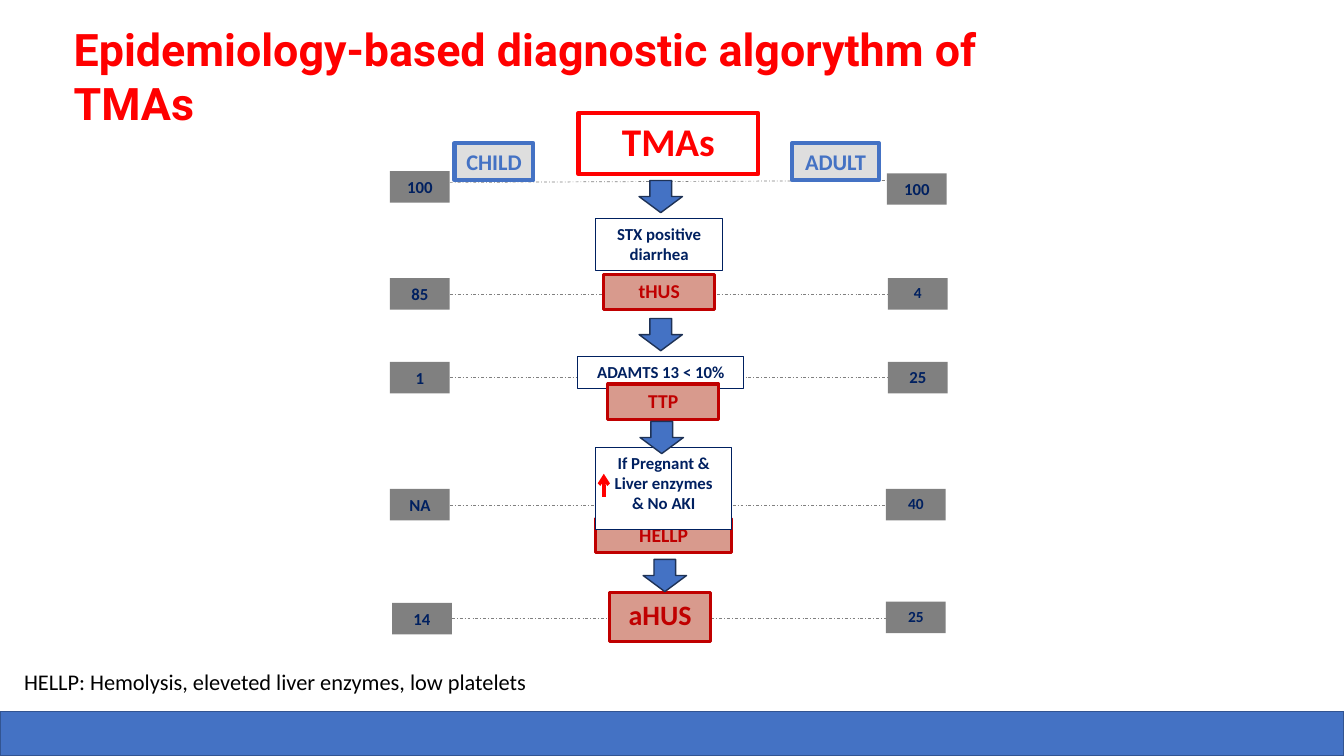
from lxml.etree import SubElement
from pptx import Presentation
from pptx.dml.color import RGBColor
from pptx.enum.dml import MSO_LINE
from pptx.enum.shapes import MSO_CONNECTOR, MSO_SHAPE
from pptx.enum.text import MSO_ANCHOR, MSO_AUTO_SIZE, PP_ALIGN
from pptx.oxml.ns import qn
from pptx.util import Pt

RED = RGBColor(0xFF, 0x00, 0x00)
DARK_RED = RGBColor(0xC0, 0x00, 0x00)
SALMON = RGBColor(0xD8, 0x9A, 0x8D)
NAVY = RGBColor(0x00, 0x20, 0x60)
BLUE = RGBColor(0x44, 0x72, 0xC4)
BAR_EDGE = RGBColor(0x32, 0x54, 0x91)
ARROW_EDGE = RGBColor(0x1E, 0x32, 0x56)
GRAY = RGBColor(0x80, 0x80, 0x80)
LIGHT_GRAY = RGBColor(0xBF, 0xBF, 0xBF)
WHITE = RGBColor(0xFF, 0xFF, 0xFF)
BLACK = RGBColor(0x00, 0x00, 0x00)

SLIDE_WIDTH, SLIDE_HEIGHT = 960, 540
BAR_TOP = 508.3
RATE_WIDTH, RATE_HEIGHT = 42.7, 22.5
ARROW_WIDTH, ARROW_HEIGHT = 31, 23

TITLE = "Epidemiology-based diagnostic algorythm of TMAs"
FOOTNOTE = "HELLP: Hemolysis, eleveted liver enzymes, low platelets"

# child: label, left, top; adult: label, left, top, size; line: start, end
RATES = [
    (("100", 278.6, 122.2), ("100", 633.6, 123.8, 12), (130.3, 129)),
    (("85", 278.6, 198.7), ("4", 634.3, 198.7, 11), (210.2, 210.2)),
    (("1", 278.6, 258.5), ("25", 634.3, 258.5, 12), (269.3, 269.3)),
    (("NA", 278.6, 349.2), ("40", 632.9, 349.2, 11), (360.7, 360.7)),
    (("14", 280.1, 430.6), ("25", 632.9, 429.8, 11), (441.4, 441.4)),
]
DIAGNOSES = [
    ("tHUS", (431.3, 195.8, 79.2, 25.2), 14),
    ("TTP", (434.2, 274.3, 79.2, 25.2), 14),
    ("HELLP", (425.5, 370.1, 97.2, 24.5), 14),
    ("aHUS", (435.6, 423.4, 72, 34.6), 20),
]
CRITERIA = [
    ("STX positive diarrhea", (425.5, 156.2, 90.7, 37)),
    ("ADAMTS 13 < 10%", (412.6, 254.9, 118.8, 22.3)),
    ("If Pregnant &\nLiver enzymes\n& No AKI", (425.5, 319.7, 97.2, 58.3)),
]
AGE_GROUPS = [
    ("CHILD", (324.7, 102.2, 56.2, 26.6)),
    ("ADULT", (565.9, 102.2, 61.9, 26.6)),
]
ARROWS = [(456.5, 128.9), (456.5, 227.5), (457.2, 301), (459.4, 399.6)]


def write_text(shape, text, size=12, color=NAVY, font="Calibri", bold=True,
               align=PP_ALIGN.CENTER, anchor=MSO_ANCHOR.TOP, wrap=True):
    frame = shape.text_frame
    frame.text = text
    frame.word_wrap = wrap
    frame.auto_size = MSO_AUTO_SIZE.NONE
    frame.vertical_anchor = anchor
    for paragraph in frame.paragraphs:
        paragraph.alignment = align
        paragraph.font.name = font
        paragraph.font.size = Pt(size)
        paragraph.font.bold = bold
        paragraph.font.color.rgb = color


def place(shape, box):
    shape.left, shape.top, shape.width, shape.height = map(Pt, box)


def add_box(slide, box, fill=None, edge=None, weight=1, kind=MSO_SHAPE.RECTANGLE):
    shape = slide.shapes.add_shape(kind, *map(Pt, box))
    shape.shadow.inherit = False
    if fill is None:
        shape.fill.background()
    else:
        shape.fill.solid()
        shape.fill.fore_color.rgb = fill
    if edge is None:
        shape.line.fill.background()
    else:
        shape.line.color.rgb = edge
        shape.line.width = Pt(weight)
    return shape


def add_line(slide, start, end, color, weight):
    line = slide.shapes.add_connector(MSO_CONNECTOR.STRAIGHT, *map(Pt, start + end))
    line.line.color.rgb = color
    line.line.width = Pt(weight)
    SubElement(line._element.spPr, qn("a:effectLst"))
    return line


def add_rates(slide):
    for child, adult, (start, end) in RATES:
        label, left, top = child
        adult_label, adult_left, adult_top, adult_size = adult
        line = add_line(slide, (left + RATE_WIDTH, start), (adult_left, end), GRAY, 0.5)
        line.line.dash_style = MSO_LINE.DASH_DOT
        child_box = add_box(slide, (left, top, RATE_WIDTH, RATE_HEIGHT), GRAY)
        write_text(child_box, label, anchor=MSO_ANCHOR.MIDDLE)
        adult_box = add_box(slide, (adult_left, adult_top, RATE_WIDTH, RATE_HEIGHT), GRAY)
        write_text(adult_box, adult_label, size=adult_size)


def add_flow(slide):
    diagnoses = {name: (box, size) for name, box, size in DIAGNOSES}

    def add_diagnosis(name):
        box, size = diagnoses[name]
        shape = add_box(slide, box, SALMON, DARK_RED, 2.25)
        write_text(shape, name, size=size, color=DARK_RED)

    add_diagnosis("HELLP")
    for text, box in CRITERIA:
        write_text(add_box(slide, box, WHITE, NAVY, 0.75), text)
    for name in ("tHUS", "TTP", "aHUS"):
        add_diagnosis(name)

    rise = add_line(slide, (431.3, 355), (431.3, 338.4), RED, 2.5)
    SubElement(rise.line._get_or_add_ln(), qn("a:tailEnd"), type="arrow")

    root = add_box(slide, (413.3, 80.6, 128.2, 43.9), edge=RED, weight=3)
    write_text(root, "TMAs", size=28, color=RED)

    for text, box in AGE_GROUPS:
        shape = add_box(slide, box, LIGHT_GRAY, BLUE, 3)
        tint = shape._element.spPr.find(qn("a:solidFill"))[0]
        SubElement(tint, qn("a:alpha"), val="50000")
        write_text(shape, text, size=16, color=BLUE, anchor=MSO_ANCHOR.MIDDLE, wrap=False)

    for left, top in ARROWS:
        add_box(slide, (left, top, ARROW_WIDTH, ARROW_HEIGHT), BLUE, ARROW_EDGE,
                kind=MSO_SHAPE.DOWN_ARROW)


def main():
    presentation = Presentation()
    presentation.slide_width = Pt(SLIDE_WIDTH)
    presentation.slide_height = Pt(SLIDE_HEIGHT)
    slide = presentation.slides.add_slide(presentation.slide_layouts[5])

    add_box(slide, (0, BAR_TOP, SLIDE_WIDTH, SLIDE_HEIGHT - BAR_TOP), BLUE, BAR_EDGE)
    title = slide.shapes.title
    place(title, (45.4, 12.2, 688.3, 46))
    write_text(title, TITLE, size=32, color=RED, font="Roboto", align=PP_ALIGN.LEFT)

    add_rates(slide)
    add_flow(slide)

    footnote = slide.shapes.add_textbox(*map(Pt, (10.1, 473.8, 434.2, 26.6)))
    write_text(footnote, FOOTNOTE, size=16, color=BLACK, bold=False, align=PP_ALIGN.LEFT)
    presentation.save("out.pptx")


if __name__ == "__main__":
    main()
